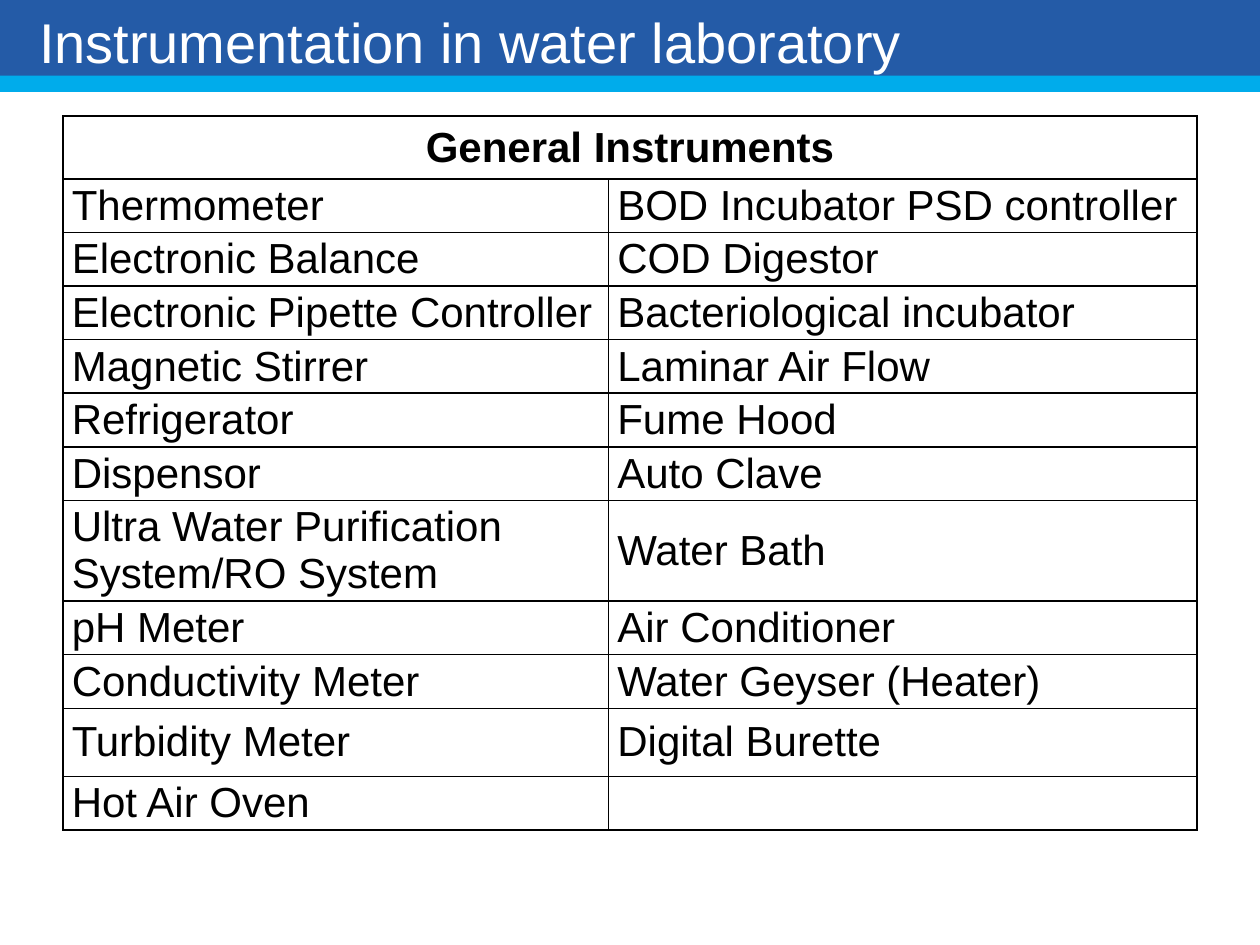
from lxml.etree import SubElement as Sub
from pptx import Presentation
from pptx.dml.color import RGBColor
from pptx.enum.shapes import MSO_SHAPE as Shape
from pptx.enum.text import MSO_ANCHOR as Anchor, MSO_AUTO_SIZE as Fit, PP_ALIGN as Align
from pptx.oxml.ns import qn
from pptx.util import Inches, Pt

# Content
TITLE = "Instrumentation in water laboratory"
HEAD = "General Instruments"
PAIRS = [
    ("Thermometer", "BOD Incubator PSD controller"),
    ("Electronic Balance", "COD Digestor"),
    ("Electronic Pipette Controller", "Bacteriological incubator"),
    ("Magnetic Stirrer", "Laminar Air Flow"),
    ("Refrigerator", "Fume Hood"),
    ("Dispensor", "Auto Clave"),
    ("Ultra Water Purification System/RO System", "Water Bath"),
    ("pH Meter", "Air Conditioner"),
    ("Conductivity Meter", "Water Geyser (Heater)"),
    ("Turbidity Meter", "Digital Burette"),
    ("Hot Air Oven", ""),
]

# Layout in inches: the plain rows share what the tall ones leave
WIDE, HIGH = 10, 7.5
EDGE, TOP, DEEP = WIDE / 20, 0.92, 5.67
COLS = [4.33, 4.67]
TALL = {0: 0.5, 7: 0.8, 10: 0.54}
COUNT = len(PAIRS) + 1
ROW = (DEEP - sum(TALL.values())) / (COUNT - len(TALL))
ROWS = [TALL.get(i, ROW) for i in range(COUNT)]
BLUE, CYAN, WHITE, BLACK = "245BA7", "00ACEB", "FFFFFF", "000000"


def paint(thing, tint):
    thing.fill.solid()
    thing.fill.fore_color.rgb = RGBColor.from_string(tint)


def style(par, size, tint, align, bold=False):
    par.alignment = align
    font = par.font
    font.name, font.size, font.bold = "Arial", Pt(size), bold
    font.color.rgb = RGBColor.from_string(tint)


def inset(box, left, top, right):
    box.margin_left, box.margin_top = Inches(left), Inches(top)
    box.margin_right, box.margin_bottom = Inches(right), 0


def frame(cell):
    props = cell._tc.get_or_add_tcPr()
    for side in ("lnL", "lnR", "lnT", "lnB"):
        line = Sub(props, qn(f"a:{side}"), w=str(Pt(1)))
        fill = Sub(line, qn("a:solidFill"))
        Sub(fill, qn("a:srgbClr"), val=BLACK)


deck = Presentation()
deck.slide_width, deck.slide_height = Inches(WIDE), Inches(HIGH)
slide = deck.slides.add_slide(deck.slide_layouts[5])

# Title band, its text clear of the stripe
title = slide.shapes.title
title.left, title.top = 0, Inches(-0.04)
title.width, title.height = Inches(WIDE), Inches(0.68)
paint(title, BLUE)
text = title.text_frame
text.text = TITLE
text.auto_size, text.vertical_anchor = Fit.NONE, Anchor.TOP
inset(text, 0.31, 0.1, 0)
style(text.paragraphs[0], 32, WHITE, Align.LEFT)

# Stripe under the title
stripe = slide.shapes.add_shape(
    Shape.RECTANGLE, 0, Inches(0.6), Inches(WIDE), Inches(0.13))
stripe.shadow.inherit = False
paint(stripe, CYAN)
stripe.line.fill.background()

# Instrument table
grid = slide.shapes.add_table(
    COUNT, len(COLS), Inches(EDGE), Inches(TOP),
    Inches(sum(COLS)), Inches(DEEP)).table
for col, width in zip(grid.columns, COLS):
    col.width = Inches(width)
for row, height in zip(grid.rows, ROWS):
    row.height = Inches(height)
grid.cell(0, 0).merge(grid.cell(0, 1))
for r, words in enumerate([(HEAD, ""), *PAIRS]):
    for c, word in enumerate(words):
        cell = grid.cell(r, c)
        cell.text = word
        cell.vertical_anchor = Anchor.MIDDLE
        inset(cell, 0.07, 0, 0.07)
        frame(cell)
        paint(cell, WHITE)
        style(cell.text_frame.paragraphs[0], 24, BLACK,
              Align.LEFT if r else Align.CENTER, bold=r == 0)

deck.save("out.pptx")
